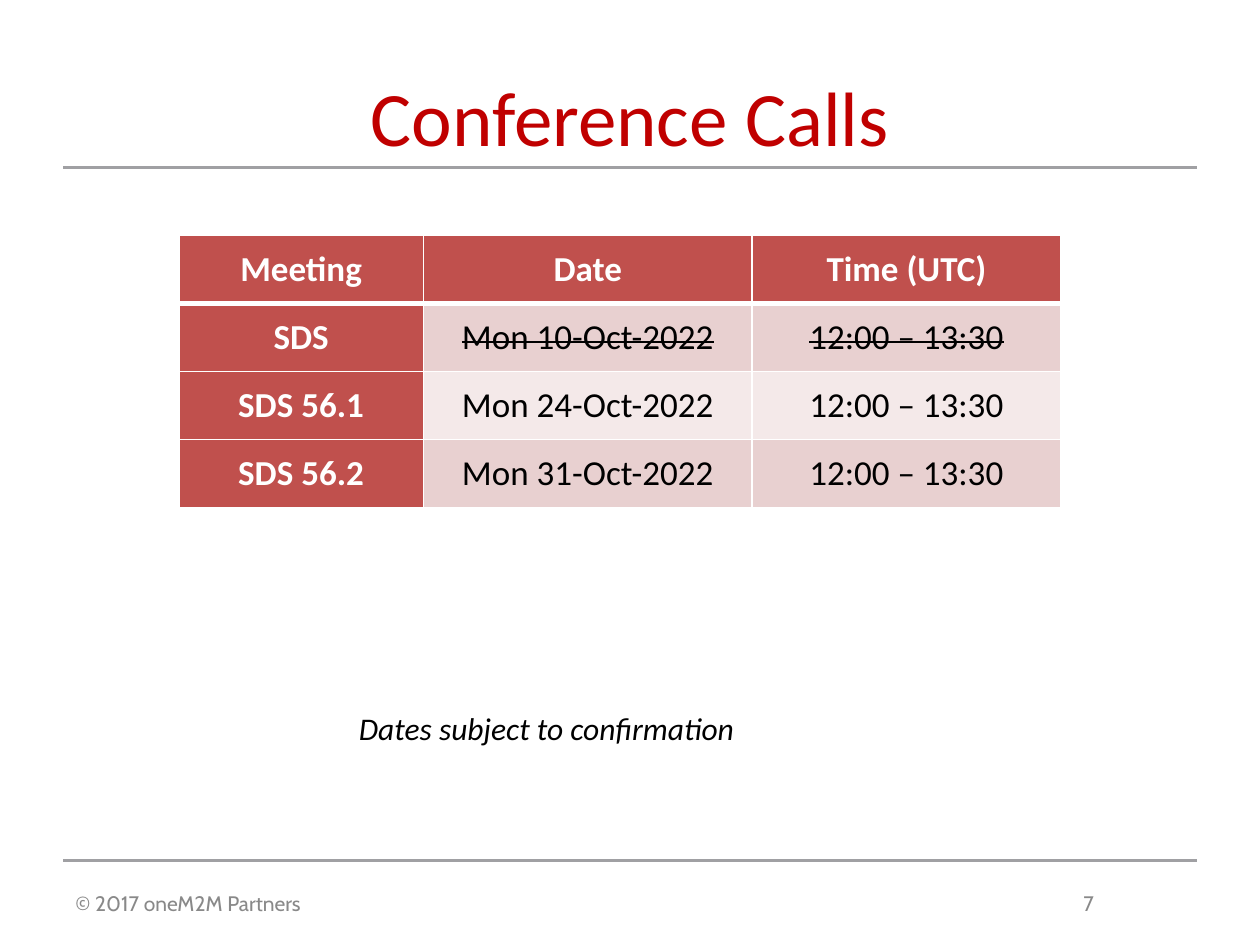
import pptx
import pptx.util
import pptx.dml.color
import pptx.enum.shapes
import pptx.enum.text
import pptx.oxml
import pptx.oxml.ns
from lxml import etree

Inches, Pt = pptx.util.Inches, pptx.util.Pt
ALIGN, ANCHOR = pptx.enum.text.PP_ALIGN, pptx.enum.text.MSO_ANCHOR
qn = pptx.oxml.ns.qn

COLORS = {
    "title": "C00000", "rule": "A0A0A3", "footer": "898989",
    "head": "C0504D", "odd": "E8D0D0", "even": "F4E9E9",
    "white": "FFFFFF", "black": "000000",
}
TITLE = "Conference Calls"
CALLS = [
    ("Meeting", "Date", "Time (UTC)"),
    ("SDS", "Mon 10-Oct-2022", "12:00 – 13:30"),
    ("SDS 56.1", "Mon 24-Oct-2022", "12:00 – 13:30"),
    ("SDS 56.2", "Mon 31-Oct-2022", "12:00 – 13:30"),
]
CANCELLED_ROW = 1
COLUMN_WIDTHS = (1.94, 2.61, 2.45)
ROW_HEIGHT = 0.54
NOTE = "Dates subject to confirmation"
FOOTER = "© 2017 oneM2M Partners\t7"
RULE_TOPS = (1.33, 6.83)


def rgb(name):
    return pptx.dml.color.RGBColor.from_string(COLORS[name])


def style(p, size, color, font="Calibri", bold=False, italic=False):
    for r in p.runs:
        f = r.font
        f.name, f.size, f.bold, f.italic = font, Pt(size), bold, italic
        f.color.rgb = rgb(color)


def add_text(s, text, box):
    sp = s.shapes.add_textbox(*map(Inches, box))
    sp.text_frame.text = text
    return sp.text_frame


def add_rule(s, top):
    line = s.shapes.add_connector(pptx.enum.shapes.MSO_CONNECTOR.STRAIGHT,
                                  Inches(0.5), Inches(top), Inches(9.5), Inches(top))
    line.line.color.rgb = rgb("rule")
    line.line.width = Pt(1.75)
    etree.SubElement(line._element.spPr, qn("a:effectLst"))


def set_borders(cell, widths):
    tc_pr = cell._tc.get_or_add_tcPr()
    for side, width in zip(("lnL", "lnR", "lnT", "lnB"), widths):
        ln = etree.SubElement(tc_pr, qn("a:" + side), w=str(Pt(width)))
        fill = etree.SubElement(ln, qn("a:solidFill"))
        etree.SubElement(fill, qn("a:srgbClr"), val=COLORS["white"])


def add_calls_table(s):
    rows, cols = len(CALLS), len(COLUMN_WIDTHS)
    table = s.shapes.add_table(rows, cols, Inches(1.42), Inches(1.87),
                               Inches(sum(COLUMN_WIDTHS)), Inches(rows * ROW_HEIGHT)).table
    table.first_col = True
    for column, width in zip(table.columns, COLUMN_WIDTHS):
        column.width = Inches(width)
    for i, values in enumerate(CALLS):
        table.rows[i].height = Inches(ROW_HEIGHT)
        for j, value in enumerate(values):
            cell = table.cell(i, j)
            heading = i == 0 or j == 0
            set_borders(cell, (1, 1, 3 if i == 1 else 1, 3 if i == 0 else 1))
            cell.fill.solid()
            cell.fill.fore_color.rgb = rgb("head" if heading else "odd" if i % 2 else "even")
            cell.vertical_anchor = ANCHOR.MIDDLE
            cell.margin_left = cell.margin_right = Inches(0.07)
            cell.margin_top = cell.margin_bottom = 0
            p = cell.text_frame.paragraphs[0]
            p.text = value
            p.alignment = ALIGN.CENTER
            style(p, 20, "white" if heading else "black", bold=heading)
            if i == CANCELLED_ROW and not heading:
                p.runs[0].font._element.set("strike", "sngStrike")


def main():
    prs = pptx.Presentation()
    prs.slide_width, prs.slide_height = Inches(10), Inches(7.5)
    s = prs.slides.add_slide(prs.slide_layouts[5])

    for top in RULE_TOPS:
        add_rule(s, top)

    title = s.shapes.title
    title.left, title.top, title.width, title.height = map(Inches, (0.5, 0.5, 9, 1.25))
    tf = title.text_frame
    tf.text = TITLE
    tf.vertical_anchor = ANCHOR.TOP
    tf.paragraphs[0].alignment = ALIGN.CENTER
    style(tf.paragraphs[0], 44, "title")

    tf = add_text(s, FOOTER, (0.5, 6.83, 9, 0.67))
    tf.word_wrap = True
    tf.vertical_anchor = ANCHOR.MIDDLE
    p = tf.paragraphs[0]
    tabs = etree.SubElement(p._p.get_or_add_pPr(), qn("a:tabLst"))
    etree.SubElement(tabs, qn("a:tab"), pos=str(Inches(8)), algn="l")
    style(p, 12, "footer", font="Cabin")

    add_calls_table(s)

    tf = add_text(s, NOTE, (2.75, 5.58, 3.25, 0.4))
    tf.word_wrap = False
    tf.auto_size = pptx.enum.text.MSO_AUTO_SIZE.SHAPE_TO_FIT_TEXT
    style(tf.paragraphs[0], 18, "black", italic=True)

    prs.save("out.pptx")


if __name__ == "__main__":
    main()
